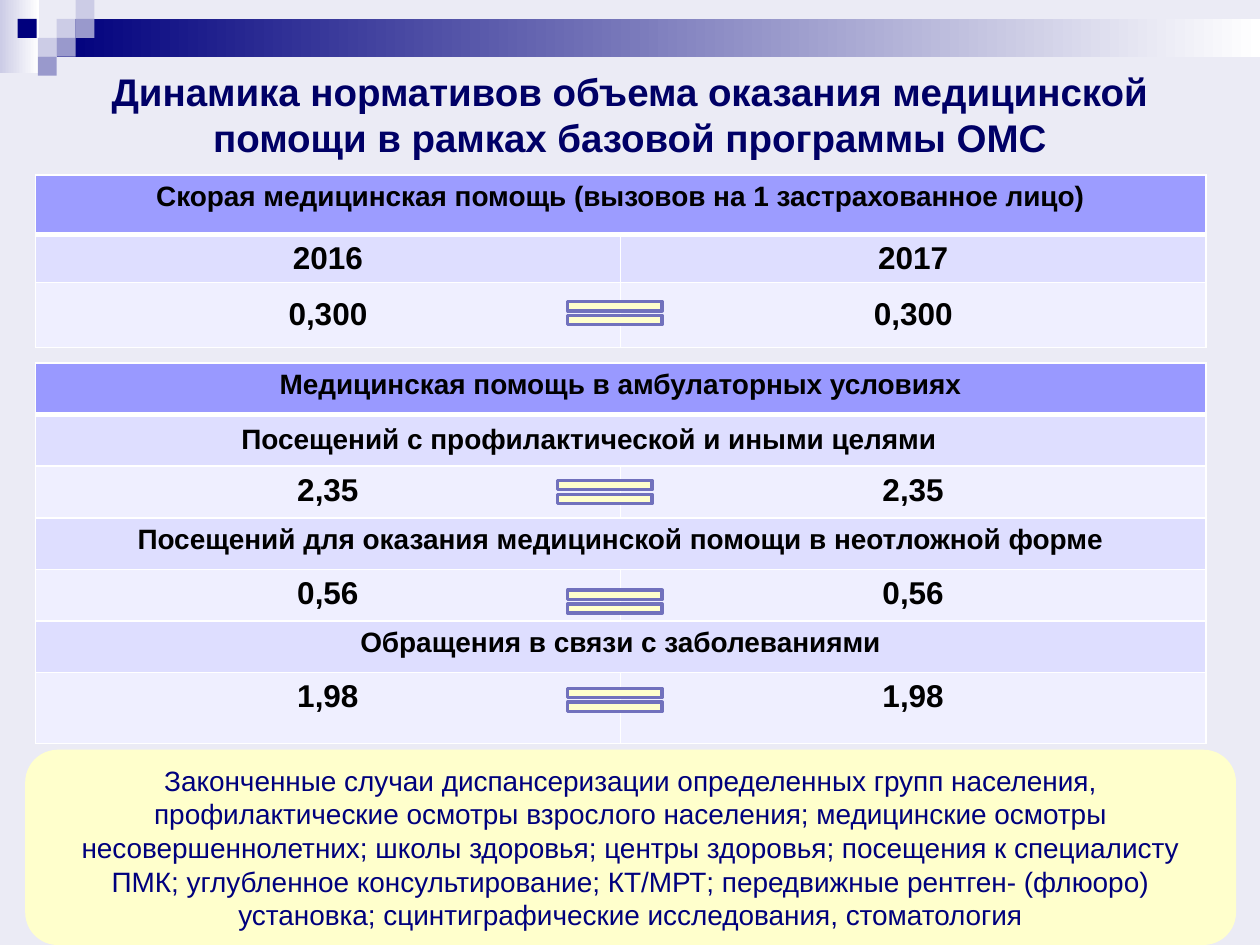
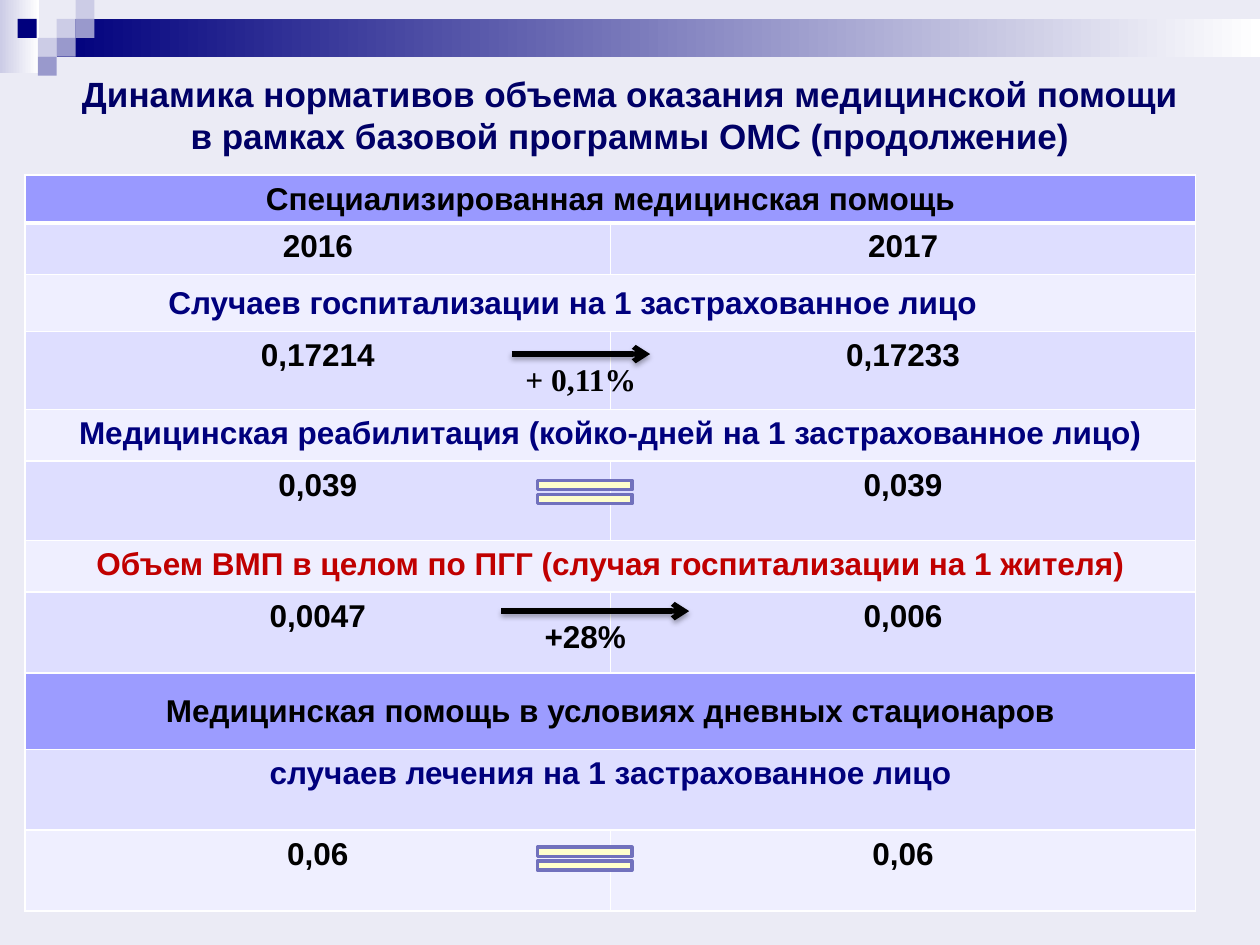
from lxml import etree
from pptx import Presentation
from pptx.dml.color import RGBColor
from pptx.enum.shapes import MSO_CONNECTOR, MSO_SHAPE
from pptx.enum.text import MSO_ANCHOR, MSO_AUTO_SIZE, PP_ALIGN
from pptx.oxml.ns import qn
from pptx.util import Emu, Inches, Pt

RECT, ROUND, EQUAL = MSO_SHAPE.RECTANGLE, MSO_SHAPE.ROUNDED_RECTANGLE, MSO_SHAPE.MATH_EQUAL
LINE = MSO_CONNECTOR.STRAIGHT
TOP, MIDDLE = MSO_ANCHOR.TOP, MSO_ANCHOR.MIDDLE
CENTER = PP_ALIGN.CENTER
FIXED = MSO_AUTO_SIZE.NONE

COLS, ROWS = 100, 75
COLORS = {
    "back": "EBEBF5", "navy": "00007D", "title": "000066", "mist": "CCCCE6",
    "slate": "9999CC", "head": "9999FF", "bar": "9C9CFF", "odd": "DEDEFF",
    "even": "EFEFFF", "cream": "FFFFCC", "edge": "7171BD", "red": "C00000",
    "black": "000000", "white": "FFFFFF",
}
TILES = [
    (4.5, 1.5, "mist"), (6, 0, "mist"), (6, 1.5, "slate"), (3, 3, "mist"),
    (1.4, 1.5, "navy"), (4.5, 3, "slate"), (3, 4.5, "slate"),
]
TITLE = "Динамика нормативов объема оказания медицинской помощи в рамках базовой программы ОМС"
NOTE = (
    "Законченные случаи диспансеризации определенных групп населения, "
    "профилактические осмотры взрослого населения; медицинские осмотры "
    "несовершеннолетних; школы здоровья; центры здоровья; посещения к специалисту "
    "ПМК; углубленное консультирование; КТ/МРТ; передвижные рентген- (флюоро) "
    "установка; сцинтиграфические исследования, стоматология"
)
CAP = {"size": 16}
BLUE = {"color": "navy"}
CALLS = [
    (4.7, ["Скорая медицинская помощь (вызовов на 1 застрахованное лицо)"], CAP),
    (3.8, ["2016", "2017"], {}),
    (5.2, ["0,300", "0,300"], {"mid": True}),
]
VISITS = [
    (4.1, ["Медицинская помощь в амбулаторных условиях"], CAP),
    (4.1, ["Посещений с профилактической и иными целями"], {"size": 16, "mid": True, "right": 6}),
    (4.1, ["2,35", "2,35"], {}),
    (4.1, ["Посещений для оказания медицинской помощи в неотложной форме"], CAP),
    (4.1, ["0,56", "0,56"], {}),
    (4.1, ["Обращения в связи с заболеваниями"], CAP),
    (5.6, ["1,98", "1,98"], {}),
]
STAYS = [
    (3.7, ["Специализированная медицинская помощь"], {}),
    (4.1, ["2016", "2017"], {}),
    (4.5, ["Случаев госпитализации на 1 застрахованное лицо"], {"color": "navy", "mid": True, "right": 7}),
    (6.2, ["0,17214", "0,17233"], {}),
    (4.1, ["Медицинская реабилитация (койко-дней на 1 застрахованное лицо)"], BLUE),
    (6.3, ["0,039", "0,039"], {}),
    (4.1, ["Объем ВМП в целом по ПГГ (случая госпитализации на 1 жителя)"], {"color": "red"}),
    (6.4, ["0,0047", "0,006"], {}),
    (6.1, ["Медицинская помощь в условиях дневных стационаров"], {"mid": True, "fill": "bar"}),
    (6.4, ["случаев лечения на 1 застрахованное лицо"], BLUE),
    (6.4, ["0,06", "0,06"], {}),
]


def shade(name):
    return RGBColor.from_string(COLORS[name])


def write(frame, text, size=18, color="black", bold=True, face="Arial"):
    """Fill a text frame with one centred, formatted paragraph."""
    frame.word_wrap = True
    para = frame.paragraphs[0]
    para.alignment = CENTER
    run = para.add_run()
    run.text = text
    font = run.font
    font.size, font.bold, font.name = Pt(size), bold, face
    font.color.rgb = shade(color)


class Deck:
    """Hold the style, the grid and the current slide."""

    def __init__(self):
        self.prs = Presentation()
        self.prs.slide_width, self.prs.slide_height = Inches(10), Inches(7.5)
        self.master = self.prs.slide_master
        fill = self.master.background.fill
        fill.solid()
        fill.fore_color.rgb = shade("back")
        self.slide = None

    def x(self, cols):
        return Emu(round(self.prs.slide_width * cols / COLS))

    def y(self, rows):
        return Emu(round(self.prs.slide_height * rows / ROWS))

    def box(self, left, top, width, height):
        return self.x(left), self.y(top), self.x(width), self.y(height)

    def page(self, text, size):
        self.slide = self.prs.slides.add_slide(self.prs.slide_layouts[5])
        title = self.slide.shapes.title
        title.left, title.top, title.width, title.height = self.box(5, 5, 90, 8.1)
        frame = title.text_frame
        frame.auto_size, frame.vertical_anchor = FIXED, MIDDLE
        write(frame, text, size=size, color="title")

    def shape(self, kind, area, fill, fade=None, edge=None):
        item = self.slide.shapes.add_shape(kind, *self.box(*area))
        item.shadow.inherit = False
        if fade:
            item.fill.gradient()
            item.fill.gradient_angle = 0
            for stop, name, place in zip(item.fill.gradient_stops, (fill, fade), (0, 1)):
                stop.color.rgb, stop.position = shade(name), place
        else:
            item.fill.solid()
            item.fill.fore_color.rgb = shade(fill)
        if edge:
            item.line.color.rgb, item.line.width = shade(edge), Pt(2)
        else:
            item.line.fill.background()
        return item

    def band(self):
        """Draw the top band once and keep it on the master."""
        parts = [
            self.shape(RECT, (0, 0, 3.1, 5.8), "mist", fade="white"),
            self.shape(RECT, (4.5, 1.5, 95.5, 3), "navy", fade="white"),
        ]
        parts += [self.shape(RECT, (left, top, 1.5, 1.5), name) for left, top, name in TILES]
        for num, part in enumerate(parts, 100):
            node = part._element
            node.nvSpPr.cNvPr.set("id", str(num))
            self.master.shapes._spTree.append(node)

    def note(self, text, area):
        item = self.shape(ROUND, area, "cream")
        item.text_frame.vertical_anchor = MIDDLE
        write(item.text_frame, text, size=16, color="navy", bold=False)

    def equal(self, left, top):
        self.shape(EQUAL, (left, top, 10.2, 3.1), "cream", edge="edge")

    def label(self, text, area, **style):
        item = self.slide.shapes.add_textbox(*self.box(*area))
        write(item.text_frame, text, **style)

    def arrow(self, left, right, top):
        """Draw a level arrow with a soft shadow."""
        item = self.slide.shapes.add_connector(
            LINE, self.x(left), self.y(top), self.x(right), self.y(top))
        item.line.color.rgb, item.line.width = shade("black"), Pt(3)
        props = item._element.spPr
        etree.SubElement(props.find(qn("a:ln")), qn("a:tailEnd"), type="arrow")
        effects = etree.SubElement(props, qn("a:effectLst"))
        cast = etree.SubElement(
            effects, qn("a:outerShdw"), blurRad=str(Pt(3.1)), dist=str(Pt(1.8)),
            dir="5400000", rotWithShape="0")
        tint = etree.SubElement(cast, qn("a:srgbClr"), val=COLORS["black"])
        etree.SubElement(tint, qn("a:alpha"), val="35000")

    def frame(self, cell, row):
        """Give a cell white borders, thick below the first row."""
        props = cell._tc.get_or_add_tcPr()
        thick = {("lnB", 0), ("lnT", 1)}
        for side in ("lnL", "lnR", "lnT", "lnB"):
            width = Pt(3 if (side, row) in thick else 1)
            line = etree.SubElement(props, qn(f"a:{side}"), w=str(width))
            fill = etree.SubElement(line, qn("a:solidFill"))
            etree.SubElement(fill, qn("a:srgbClr"), val=COLORS["white"])

    def table(self, left, top, rows, head="head"):
        """Add a two-column table whose one-text rows span both columns."""
        high = sum(row[0] for row in rows)
        grid = self.slide.shapes.add_table(
            len(rows), 2, *self.box(left, top, 92.9, high)).table
        grid.first_row = grid.horz_banding = False
        for num, (tall, texts, style) in enumerate(rows):
            style = dict(style)
            plain = ("odd" if num % 2 else "even") if num else head
            fill = style.pop("fill", plain)
            anchor = MIDDLE if style.pop("mid", False) else TOP
            right = style.pop("right", 1)
            grid.rows[num].height = self.y(tall)
            if len(texts) == 1:
                grid.cell(num, 0).merge(grid.cell(num, 1))
            for col in range(2):
                cell = grid.cell(num, col)
                self.frame(cell, num)
                cell.fill.solid()
                cell.fill.fore_color.rgb = shade(fill)
                cell.vertical_anchor = anchor
                cell.margin_right = self.x(right)
                if col < len(texts):
                    write(cell.text_frame, texts[col], **style)


def main():
    deck = Deck()
    deck.page(TITLE, 22)
    deck.band()
    deck.table(2.8, 28.8, VISITS)
    deck.note(NOTE, (2, 59.5, 96.1, 15.5))
    deck.table(2.8, 13.9, CALLS, head="bar")
    for left, top in [(42.9, 37.5), (43.7, 46.2), (43.7, 54), (43.7, 23.3)]:
        deck.equal(left, top)

    deck.page(f"{TITLE} (продолжение)", 20)
    deck.table(2, 13.9, STAYS)
    for top in (37.5, 66.6):
        deck.equal(41.3, top)
    deck.label("+28%", (38.2, 48.5, 16.5, 4))
    deck.arrow(40.6, 51.6, 28.1)
    deck.label("+ 0,11%", (34.3, 28.1, 23.6, 4), face="Times New Roman")
    deck.arrow(39.8, 54.7, 48.5)
    deck.prs.save("out.pptx")


if __name__ == "__main__":
    main()
